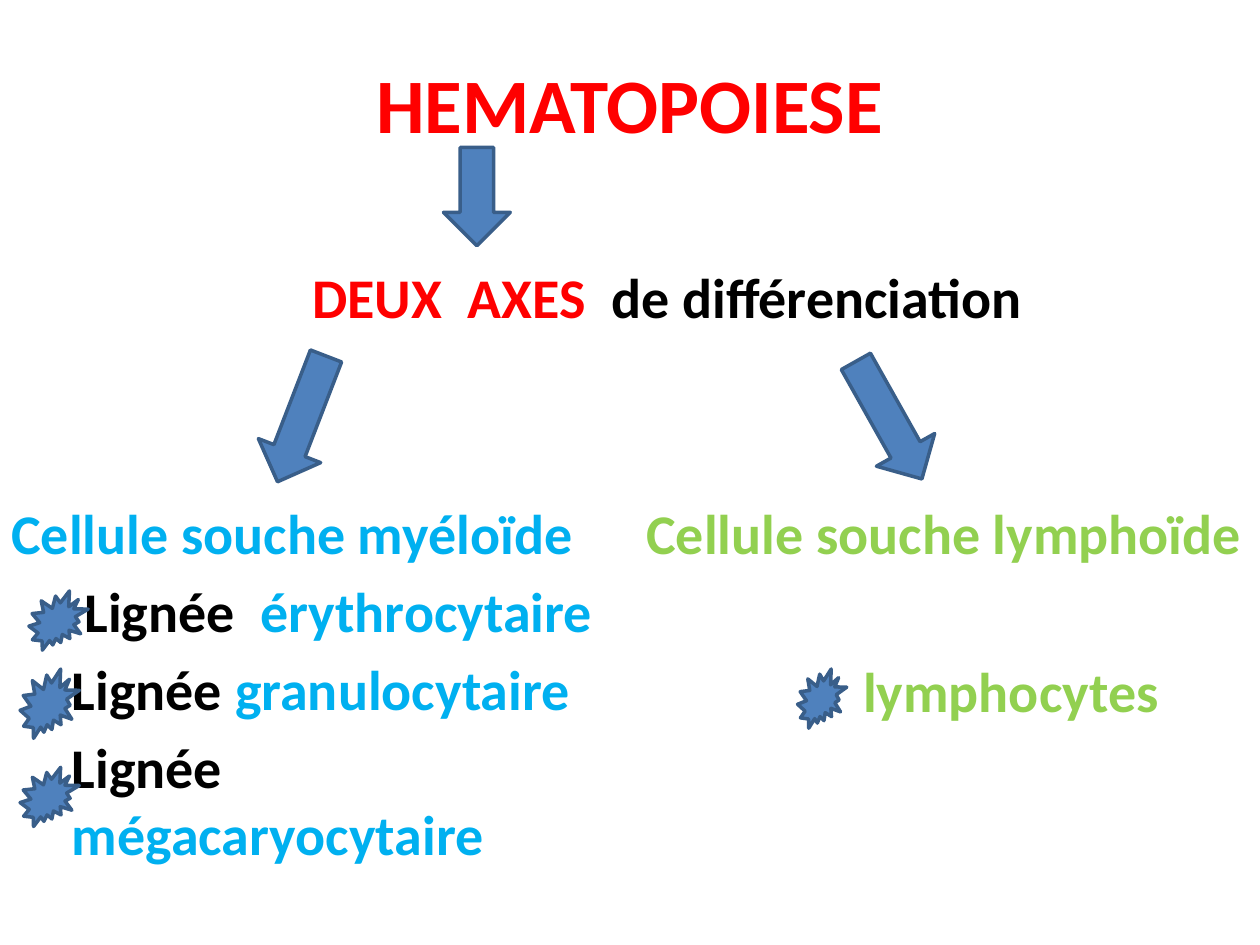
import pptx
import pptx.util
import pptx.dml.color
import pptx.enum.shapes
import pptx.enum.text

Inches, Pt = pptx.util.Inches, pptx.util.Pt
RGB = pptx.dml.color.RGBColor
SHAPE = pptx.enum.shapes.MSO_SHAPE
COLORS = {"red": "FF0000", "black": "000000", "blue": "00B0F0",
          "green": "92D050", "fill": "4F81BD", "line": "395E89"}

# Text rows share one pitch: line height plus paragraph spacing
TOP, ROW = 1.46, 0.625
LEFT, RIGHT = 0.09, 5.13

prs = pptx.Presentation()
prs.slide_width, prs.slide_height = Inches(10), Inches(7.5)
s = prs.slides.add_slide(prs.slide_layouts[5])


def add_lines(x, row, width, lines):
    """Add bold lines from a grid row; each is (indent, [(text, color)])."""
    sp = s.shapes.add_textbox(Inches(x), Inches(TOP + row * ROW),
                              Inches(width), Inches(len(lines) * ROW))
    tf = sp.text_frame
    tf.word_wrap = True
    tf.margin_left = tf.margin_right = tf.margin_top = tf.margin_bottom = 0
    for i, (indent, runs) in enumerate(lines):
        p = tf.add_paragraph() if i else tf.paragraphs[0]
        p.font.name, p.font.size, p.font.bold = "Calibri", Pt(32), True
        p.space_before = Pt(6 if i else 0)
        p._p.get_or_add_pPr().set("marL", str(Inches(indent)))
        for text, color in runs:
            r = p.add_run()
            r.text = text
            r.font.color.rgb = RGB.from_string(COLORS[color])


def add_mark(kind, x, y, w, h, rotation=0):
    sp = s.shapes.add_shape(kind, Inches(x), Inches(y), Inches(w), Inches(h))
    sp.rotation = rotation
    sp.shadow.inherit = False
    sp.fill.solid()
    sp.fill.fore_color.rgb = RGB.from_string(COLORS["fill"])
    sp.line.color.rgb = RGB.from_string(COLORS["line"])
    sp.line.width = Pt(2)


# Title
title = s.shapes.title
title.left, title.top = Inches(0.5), Inches(0.3)
title.width, title.height = Inches(9), Inches(1.03)
title.text_frame.text = "HEMATOPOIESE"
p = title.text_frame.paragraphs[0]
p.font.name, p.font.size, p.font.bold = "Calibri", Pt(44), True
p.font.color.rgb = RGB.from_string(COLORS["red"])

# Two axes
add_lines(2.48, 1, 7, [
    (0, [("DEUX  AXES  ", "red"), ("de différenciation", "black")])])

# Myeloid branch
add_lines(LEFT, 4, RIGHT - LEFT, [
    (0, [("Cellule souche myéloïde", "blue")]),
    (0.58, [("Lignée  ", "black"), ("érythrocytaire", "blue")]),
    (0.48, [("Lignée ", "black"), ("granulocytaire", "blue")]),
    (0.48, [("Lignée ", "black"), ("mégacaryocytaire", "blue")])])

# Lymphoid branch
add_lines(RIGHT, 4, 10 - RIGHT, [(0, [("Cellule souche lymphoïde", "green")])])
add_lines(6.85, 6, 3, [(0, [("lymphocytes", "green")])])

# Arrows between levels
for x, y, h, rotation in [(6.79, 2.8, 1.07, 330.7), (2.13, 2.79, 1.07, 21.1),
                          (3.52, 1.17, 0.78, 0)]:
    add_mark(SHAPE.DOWN_ARROW, x, y, 0.53, h, rotation)

# Burst bullets beside the cell lines
for x, y, w, h in [(0.23, 4.69, 0.47, 0.47), (0.16, 5.31, 0.47, 0.55),
                   (0.16, 6.09, 0.47, 0.47), (6.33, 5.31, 0.39, 0.47)]:
    add_mark(SHAPE.EXPLOSION2, x, y, w, h)

prs.save("out.pptx")
